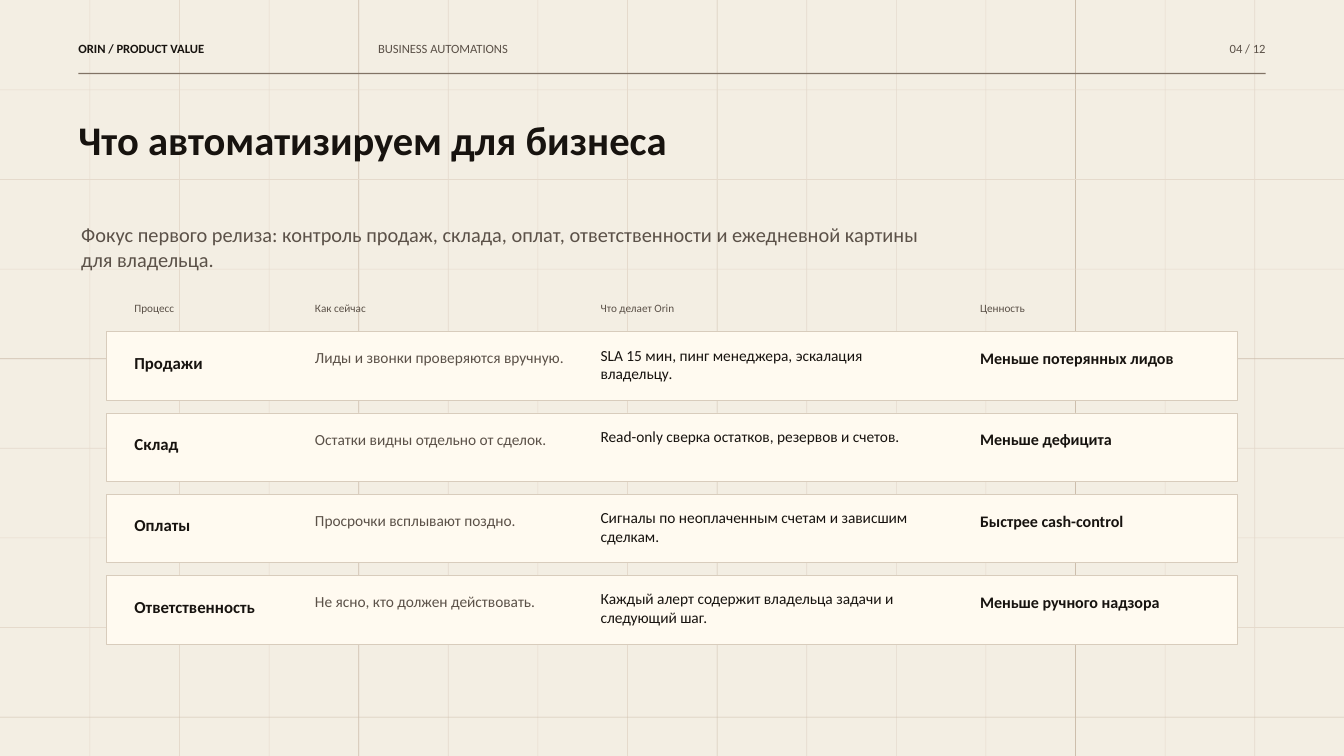
import pptx
import pptx.util
import pptx.dml.color
import pptx.enum.shapes
import pptx.enum.text

RGB = pptx.dml.color.RGBColor
PAPER = RGB(0xF3, 0xEE, 0xE3)
FAINT = RGB(0xE5, 0xDA, 0xCC)
STRONG = RGB(0xCD, 0xBE, 0xAC)
INK = RGB(0x17, 0x13, 0x0F)
MUTED = RGB(0x5B, 0x51, 0x48)
RULE = RGB(0x81, 0x73, 0x65)
CARD = RGB(0xFF, 0xFA, 0xF0)
EDGE = RGB(0xD8, 0xCC, 0xBC)

COLS, ROWS = 240, 135
MESH = 16
TOP, PITCH = 59.25, 14.5

SMALL = {"size": 13.5, "color": MUTED}
BRAND = {"size": 13.5, "color": INK, "bold": True}
TITLE = {"size": 43.5, "color": INK, "bold": True}
LEAD = {"size": 21.8, "color": MUTED}
LABEL = {"size": 12, "color": MUTED}

FIELDS = [
    ("Процесс", 24, 25, 3.75, 26.25, 4, {"size": 18, "color": INK, "bold": True}),
    ("Как сейчас", 56.25, 27.5, 3, 45, 5.75, {"size": 16.5, "color": MUTED}),
    ("Что делает Orin", 107.25, 32.5, 2.5, 60, 6.75, {"size": 16.5, "color": INK}),
    ("Ценность", 175, 27.5, 3, 40, 5.75, {"size": 17.2, "color": INK, "bold": True}),
]

CARDS = [
    ("Продажи", "Лиды и звонки проверяются вручную.",
     "SLA 15 мин, пинг менеджера, эскалация владельцу.", "Меньше потерянных лидов"),
    ("Склад", "Остатки видны отдельно от сделок.",
     "Read-only сверка остатков, резервов и счетов.", "Меньше дефицита"),
    ("Оплаты", "Просрочки всплывают поздно.",
     "Сигналы по неоплаченным счетам и зависшим сделкам.", "Быстрее cash-control"),
    ("Ответственность", "Не ясно, кто должен действовать.",
     "Каждый алерт содержит владельца задачи и следующий шаг.", "Меньше ручного надзора"),
]


class Board:
    face = "Calibri"

    def __init__(self, deck):
        self.cell = deck.slide_width / COLS
        self.slide = deck.slides.add_slide(deck.slide_layouts[6])
        fill = self.slide.background.fill
        fill.solid()
        fill.fore_color.rgb = PAPER

    def place(self, *cells):
        return [pptx.util.Emu(round(n * self.cell)) for n in cells]

    def rect(self, x, y, w, h, color, edge=None):
        kind = pptx.enum.shapes.MSO_SHAPE.RECTANGLE
        shape = self.slide.shapes.add_shape(kind, *self.place(x, y, w, h))
        shape.shadow.inherit = False
        shape.fill.solid()
        shape.fill.fore_color.rgb = color
        if edge is None:
            shape.line.fill.background()
        else:
            shape.line.color.rgb = edge
            shape.line.width = pptx.util.Pt(0.75)

    def text(self, x, y, w, h, words, style, align=pptx.enum.text.PP_ALIGN.LEFT):
        frame = self.slide.shapes.add_textbox(*self.place(x, y, w, h)).text_frame
        frame.word_wrap = True
        for side in ("left", "top", "right", "bottom"):
            setattr(frame, f"margin_{side}", 0)
        para = frame.paragraphs[0]
        para.alignment = align
        run = para.add_run()
        run.text = words
        run.font.color.rgb = style["color"]
        form = {"name": self.face, "size": pptx.util.Pt(style["size"]),
                "bold": style.get("bold", False)}
        for key, value in form.items():
            setattr(run.font, key, value)

    def mesh(self):
        for x in range(MESH, COLS, MESH):
            self.rect(x, 0, 0.12, ROWS, self.shade(x))
        for y in range(MESH, ROWS, MESH):
            self.rect(0, y, COLS, 0.12, self.shade(y))

    def shade(self, n):
        return FAINT if n % (4 * MESH) else STRONG

    def header(self):
        self.text(14, 7.25, 52.5, 3.5, "ORIN / PRODUCT VALUE", BRAND)
        self.text(67.5, 7.25, 105, 3.5, "BUSINESS AUTOMATIONS", SMALL)
        self.text(205, 7.25, 21, 3.5, "04 / 12", SMALL, pptx.enum.text.PP_ALIGN.RIGHT)
        self.rect(14, 13, 212, 0.25, RULE)

    def card(self, y, texts):
        self.rect(19, y, 202, 12.25, CARD, EDGE)
        for words, (_, x, _, drop, w, h, style) in zip(texts, FIELDS):
            self.text(x, y + drop, w, h, words, style)


def main():
    deck = pptx.Presentation()
    deck.slide_width = pptx.util.Inches(20)
    deck.slide_height = pptx.util.Inches(11.25)
    board = Board(deck)
    board.mesh()
    board.header()
    board.text(14, 20.5, 130, 17.25, "Что автоматизируем для бизнеса", TITLE)
    board.text(14.5, 39.75, 151.25, 9.75,
               "Фокус первого релиза: контроль продаж, склада, оплат, "
               "ответственности и ежедневной картины для владельца.", LEAD)
    for name, x, w, *_ in FIELDS:
        board.text(x, 53.75, w, 3, name, LABEL)
    for i, texts in enumerate(CARDS):
        board.card(TOP + i * PITCH, texts)
    deck.save("out.pptx")


if __name__ == "__main__":
    main()
